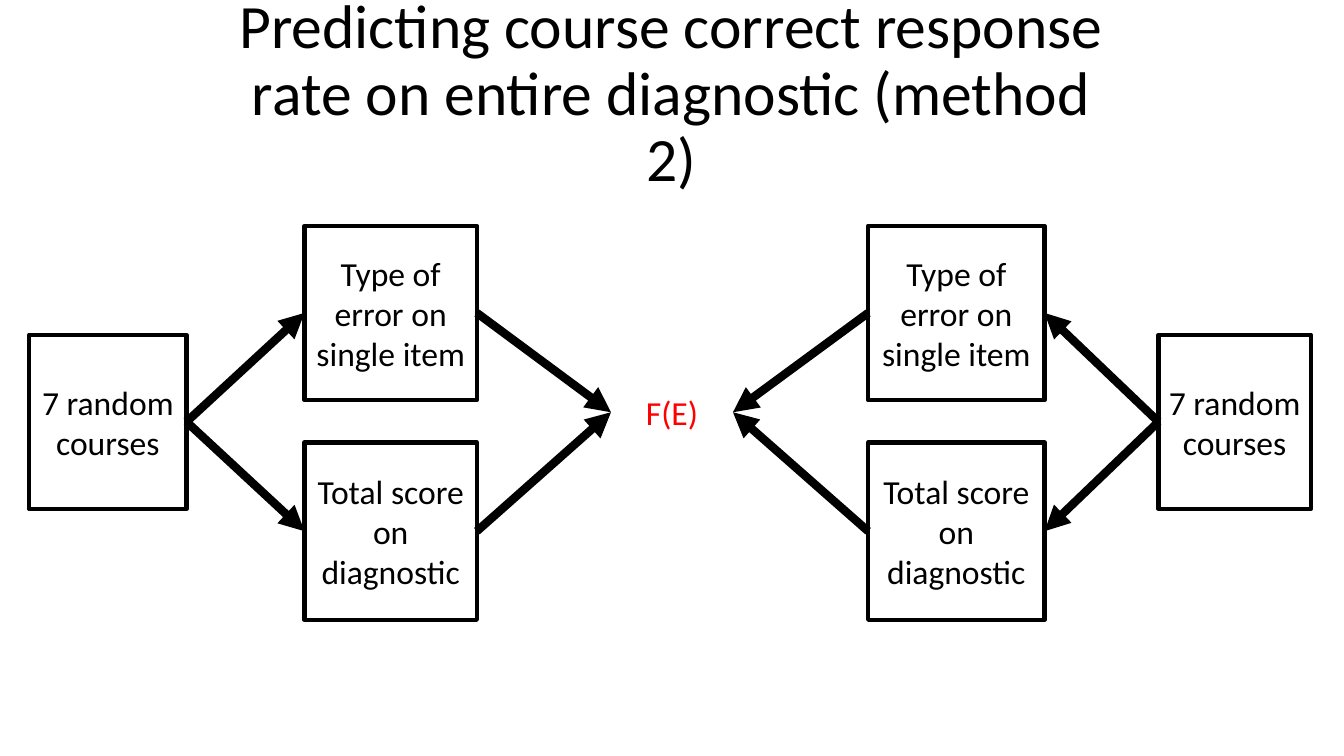
from lxml.etree import SubElement
from pptx import Presentation
from pptx.dml.color import RGBColor
from pptx.enum.shapes import MSO_CONNECTOR as Connector, MSO_SHAPE as Shape
from pptx.enum.text import MSO_ANCHOR as Anchor, MSO_AUTO_SIZE as AutoSize, PP_ALIGN as Align
from pptx.oxml.ns import qn
from pptx.util import Pt

PX = 9144
FONT = "Calibri"
COLORS = {"ink": "000000", "result": "FF0000"}
LEFT, RIGHT = 1, 3
TITLE = "Predicting course correct response rate on entire diagnostic (method 2)"
COURSES = "7 random courses"
ERROR_TYPE = "Type of error on single item"
TOTAL_SCORE = "Total score on diagnostic"


def px(*lengths):
    return [length * PX for length in lengths]


def color(name):
    return RGBColor.from_string(COLORS[name])


def write(frame, text, size, color_name="ink", anchor=Anchor.MIDDLE):
    frame.word_wrap = True
    frame.auto_size = AutoSize.NONE
    frame.vertical_anchor = anchor
    paragraph = frame.paragraphs[0]
    paragraph.alignment = Align.CENTER
    run = paragraph.add_run()
    run.text = text
    run.font.name = FONT
    run.font.size = Pt(size)
    run.font.color.rgb = color(color_name)
    return paragraph


def add_title(slide):
    title = slide.shapes.title
    title.left, title.top, title.width, title.height = px(210, 22, 912, 145)
    write(title.text_frame, TITLE, 44).line_spacing = 0.9


def add_box(slide, text, left, top, width, height):
    box = slide.shapes.add_shape(Shape.RECTANGLE, *px(left, top, width, height))
    box.shadow.inherit = False
    box.fill.background()
    box.line.color.rgb = color("ink")
    box.line.width = Pt(3)
    frame = box.text_frame
    frame.margin_left = frame.margin_right = 7 * PX
    write(frame, text, 24)
    return box


def add_label(slide, text, left, top, width, height):
    label = slide.shapes.add_textbox(*px(left, top, width, height))
    write(label.text_frame, text, 24, "result", Anchor.TOP)
    return label


def add_arrow(slide, source, source_side, target, target_side):
    arrow = slide.shapes.add_connector(Connector.STRAIGHT, 0, 0, 0, 0)
    arrow.begin_connect(source, source_side)
    arrow.end_connect(target, target_side)
    arrow.line.color.rgb = color("ink")
    arrow.line.width = Pt(6)
    SubElement(arrow.line._get_or_add_ln(), qn("a:tailEnd"), type="triangle")
    SubElement(arrow._element.spPr, qn("a:effectLst"))


def add_branch(slide, result, courses_span, measure_span, outward, inward):
    courses_left, courses_width = courses_span
    measure_left, measure_width = measure_span
    courses = add_box(slide, COURSES, courses_left, 332, courses_width, 173)
    for text, top, height in ((ERROR_TYPE, 224, 173), (TOTAL_SCORE, 439, 176)):
        measure = add_box(slide, text, measure_left, top, measure_width, height)
        add_arrow(slide, courses, inward, measure, outward)
        add_arrow(slide, measure, inward, result, outward)


def main():
    deck = Presentation()
    deck.slide_width, deck.slide_height = px(1333, 750)
    slide = deck.slides.add_slide(deck.slide_layouts[5])
    add_title(slide)
    result = add_label(slide, "F(E)", 606, 384, 121, 50)
    add_branch(slide, result, (29, 156), (302, 171), LEFT, RIGHT)
    add_branch(slide, result, (1149, 151), (861, 175), RIGHT, LEFT)
    deck.save("out.pptx")


if __name__ == "__main__":
    main()
